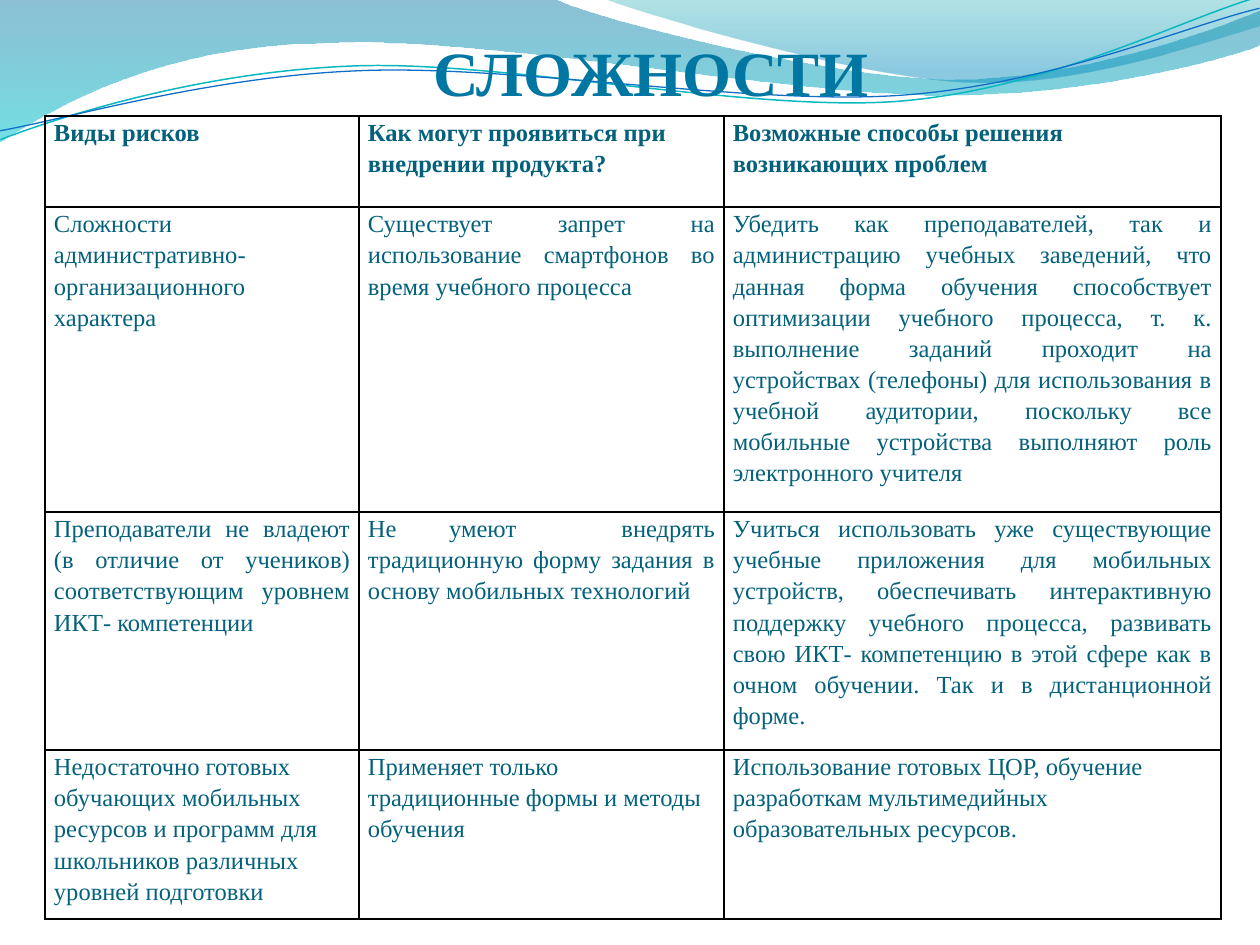
from dataclasses import dataclass

import pptx
import pptx.dml.color
import pptx.enum.text
import pptx.oxml
import pptx.oxml.ns
import pptx.util

EMU_PER_PX = 914400 / 126
FONT = "Times New Roman"
COLORS = {
    "title": "0076A3",
    "text": "04617B",
    "border": "000000",
    "wave_blue": "0074A1",
    "wave_aqua": "00C6CF",
    "crest_teal": "00A1A9",
    "crest_blue": "008BBF",
    "line_teal": "0AB8BF",
    "line_blue": "0F6FC6",
}
ALIGN = pptx.enum.text.PP_ALIGN
Point = tuple[int, int]


@dataclass
class Stop:
    position: float
    color: str
    opacity: int


@dataclass
class Wave:
    """Segments of one point are straight, segments of three are Bezier curves."""
    start: Point
    segments: list[list[Point]]
    stops: tuple[Stop, ...] = ()
    line: str = ""
    width: float = 0
    rotation: float = 0


@dataclass
class Row:
    height: int
    cells: tuple[str, str, str]
    align: ALIGN = ALIGN.LEFT
    bold: bool = False


WAVES = [
    Wave((0, 0), [
        [(554, -1)],
        [(600, 21), (837, 79), (955, 79)],
        [(1075, 79), (1207, 33), (1260, 11)],
        [(1261, 45)],
        [(1239, 55), (1096, 96), (940, 95)],
        [(784, 95), (481, 35), (324, 43)],
        [(163, 45), (58, 105), (-1, 142)],
    ], stops=(Stop(0, "wave_blue", 45), Stop(1, "wave_aqua", 55))),
    Wave((604, -1), [
        [(641, 14), (859, 78), (969, 82)],
        [(1079, 87), (1211, 40), (1260, 26)],
        [(1260, 0)],
    ], stops=(Stop(0, "crest_teal", 30), Stop(0.8, "crest_blue", 45))),
    Wave((-2, 110), [
        [(58, 90), (199, 52), (350, 53)],
        [(499, 53), (745, 118), (896, 114)],
        [(1049, 109), (1184, 45), (1260, 27)],
    ], line="line_teal", width=0.85, rotation=357.3),
    Wave((-2, 101), [
        [(57, 94), (207, 57), (357, 58)],
        [(509, 58), (750, 112), (902, 108)],
        [(1052, 104), (1188, 52), (1262, 38)],
    ], line="line_blue", width=0.75, rotation=357.3),
]

COLUMNS = (314, 365, 497)
ROWS = [
    Row(91, (
        "Виды рисков",
        "Как могут проявиться при внедрении продукта?",
        "Возможные способы решения возникающих проблем",
    ), bold=True),
    Row(305, (
        "Сложности административно-организационного характера",
        "Существует запрет на использование смартфонов во время учебного процесса",
        "Убедить как преподавателей, так и администрацию учебных заведений, что данная форма "
        "обучения способствует оптимизации учебного процесса, т. к. выполнение заданий проходит "
        "на устройствах (телефоны) для использования в учебной аудитории, поскольку все "
        "мобильные устройства выполняют роль электронного учителя",
    ), ALIGN.JUSTIFY),
    Row(238, (
        "Преподаватели не владеют (в отличие от учеников) соответствующим уровнем "
        "ИКТ- компетенции",
        "Не умеют  внедрять традиционную форму задания в основу мобильных технологий",
        "Учиться использовать уже существующие учебные приложения для мобильных устройств, "
        "обеспечивать интерактивную поддержку учебного процесса, развивать свою ИКТ- компетенцию "
        "в этой сфере как в очном обучении. Так и в дистанционной форме.",
    ), ALIGN.JUSTIFY),
    Row(169, (
        "Недостаточно готовых обучающих мобильных ресурсов и программ для школьников различных "
        "уровней подготовки",
        "Применяет только традиционные формы и методы обучения",
        "Использование готовых ЦОР, обучение разработкам мультимедийных образовательных ресурсов.",
    )),
]


def px(n: int) -> int:
    return round(n * EMU_PER_PX)


def rgb(name: str) -> pptx.dml.color.RGBColor:
    return pptx.dml.color.RGBColor.from_string(COLORS[name])


def set_all(obj, values: dict) -> None:
    for name, value in values.items():
        setattr(obj, name, value)


def bend(sp, segments: list[list[Point]]) -> None:
    """Join the straight steps of each three-point segment into one Bezier curve."""
    steps = iter(list(sp._element.iter(pptx.oxml.ns.qn("a:lnTo"))))
    for segment in segments:
        group = [next(steps) for _ in segment]
        if len(group) == 1:
            continue
        curve = group[0].makeelement(pptx.oxml.ns.qn("a:cubicBezTo"), {})
        group[0].addprevious(curve)
        for step in group:
            curve.append(step[0])
            step.getparent().remove(step)


def add_wave(s, wave: Wave) -> None:
    builder = s.shapes.build_freeform(*wave.start, scale=EMU_PER_PX)
    points = [point for segment in wave.segments for point in segment]
    builder.add_line_segments(points, close=bool(wave.stops))
    sp = builder.convert_to_shape()
    bend(sp, wave.segments)
    sp.rotation = wave.rotation
    sp.shadow.inherit = False
    if not wave.stops:
        sp.fill.background()
        sp.line.color.rgb = rgb(wave.line)
        sp.line.width = pptx.util.Pt(wave.width)
        return
    sp.line.fill.background()
    sp.fill.gradient()
    sp.fill.gradient_angle = 270
    for gs, stop in zip(sp.fill.gradient_stops, wave.stops):
        gs.position = stop.position
        gs.color.rgb = rgb(stop.color)
    colors = list(sp._element.spPr.iter(pptx.oxml.ns.qn("a:srgbClr")))
    for color, stop in zip(colors, wave.stops):
        alpha = color.makeelement(pptx.oxml.ns.qn("a:alpha"), {"val": str(stop.opacity * 1000)})
        color.append(alpha)


def write(tf, text: str, color: str, size: int, bold: bool, paragraph: dict) -> None:
    tf.word_wrap = True
    p = tf.paragraphs[0]
    set_all(p, paragraph)
    r = p.add_run()
    r.text = text
    set_all(r.font, {"name": FONT, "size": pptx.util.Pt(size), "bold": bold})
    r.font.color.rgb = rgb(color)


def add_borders(cell) -> None:
    for side in "LRTB":
        cell._tc.get_or_add_tcPr().append(pptx.oxml.parse_xml(
            f'<a:ln{side} {pptx.oxml.ns.nsdecls("a")} w="12700"><a:solidFill>'
            f'<a:srgbClr val="{COLORS["border"]}"/></a:solidFill></a:ln{side}>'))


def add_risk_table(s, left: int, top: int) -> None:
    size = px(sum(COLUMNS)), px(sum(row.height for row in ROWS))
    table = s.shapes.add_table(len(ROWS), len(COLUMNS), px(left), px(top), *size).table
    set_all(table, {"first_row": False, "horz_banding": False})
    for column, width in zip(table.columns, COLUMNS):
        column.width = px(width)
    for i, row in enumerate(ROWS):
        table.rows[i].height = px(row.height)
        for cell, text in zip(table.rows[i].cells, row.cells):
            set_all(cell, {"margin_left": px(9), "margin_right": px(9),
                           "margin_top": 0, "margin_bottom": 0})
            add_borders(cell)
            cell.fill.background()
            write(cell.text_frame, text, "text", 14, row.bold,
                  {"alignment": row.align, "line_spacing": 1.15,
                   "space_after": pptx.util.Pt(6)})


def main() -> None:
    prs = pptx.Presentation()
    set_all(prs, {"slide_width": px(1260), "slide_height": px(945)})
    s = prs.slides.add_slide(prs.slide_layouts[6])
    for wave in WAVES:
        add_wave(s, wave)
    title = s.shapes.add_textbox(px(80), px(26), px(1142), px(89))
    title.text_frame.vertical_anchor = pptx.enum.text.MSO_ANCHOR.BOTTOM
    write(title.text_frame, "СЛОЖНОСТИ", "title", 36, True, {"alignment": ALIGN.CENTER})
    add_risk_table(s, 45, 116)
    prs.save("out.pptx")


if __name__ == "__main__":
    main()
